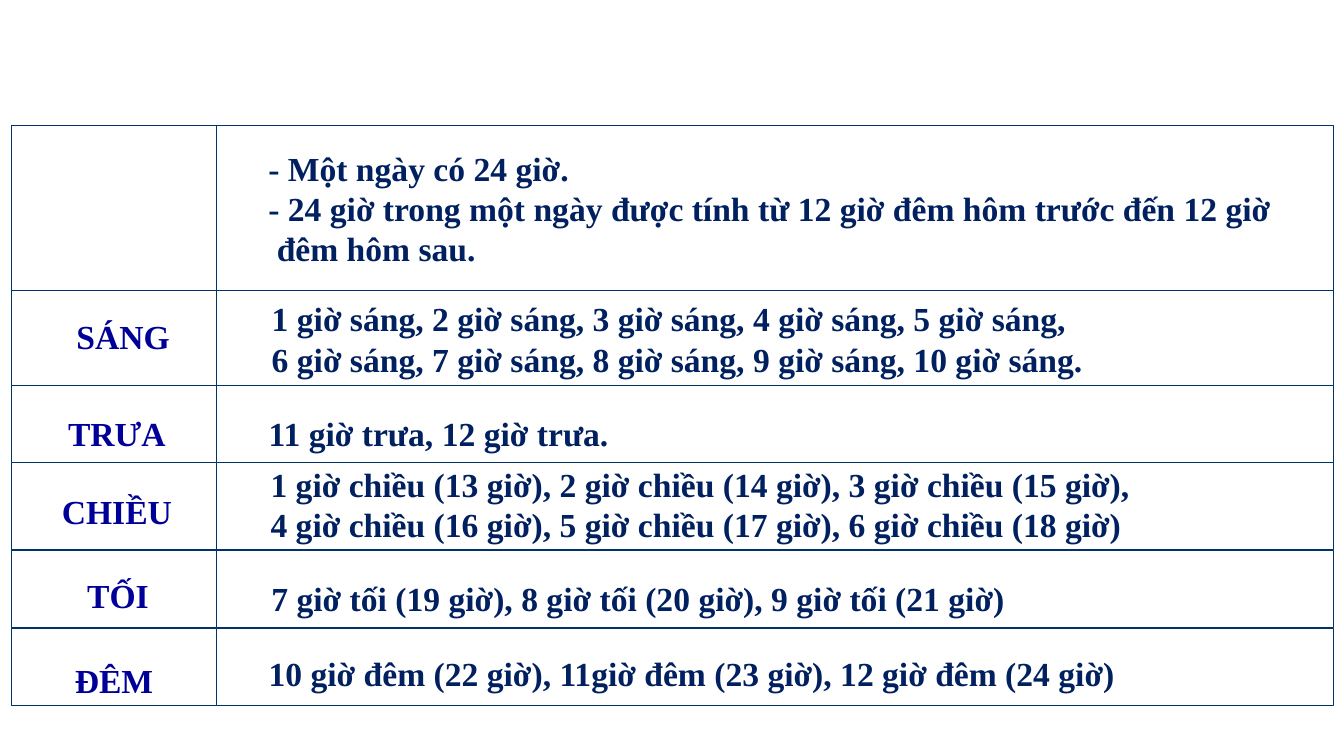
from pptx import Presentation
from pptx.dml.color import RGBColor
from pptx.enum.shapes import MSO_SHAPE
from pptx.enum.text import MSO_ANCHOR, MSO_AUTO_SIZE, PP_ALIGN
from pptx.util import Pt

NAVY, BLUE, WHITE, BORDER = "002060", "000099", "FFFFFF", "003366"
LABEL_X, LABEL_W, LABEL_H = 7.92, 146.5, 60
HOURS_X, HOURS_W = 154.6, 797.8
INTRO = (90, 117.36)
INTRO_LINES = [
    ("- Một ngày có 24 giờ.", 30),
    ("- 24 giờ trong một ngày được tính từ 12 giờ đêm hôm trước đến 12 giờ", 30),
    ("đêm hôm sau.", 36),
]
ROWS = [(207.36, 68.2), (327.6, 64.8), (275.04, 55.4), (448.6, 55.4), (393.1, 55.4)]
LABELS = [
    ("SÁNG", 23.8, 210.2, WHITE),
    ("TRƯA", 19.4, 279.4, None),
    ("CHIỀU", 19.4, 334.8, None),
    ("TỐI", 20.2, 395.3, None),
    ("ĐÊM", 17.3, 455.8, None),
]
HOURS = [
    (157, 209.5, 794.9, 65.5, 30, WHITE,
     ["1 giờ sáng, 2 giờ sáng, 3 giờ sáng, 4 giờ sáng, 5 giờ sáng,",
      "6 giờ sáng, 7 giờ sáng, 8 giờ sáng, 9 giờ sáng, 10 giờ sáng."]),
    (154.8, 291.6, 802.8, 36, 30, None, ["11 giờ trưa, 12 giờ trưa."]),
    (156.2, 327.6, 796.3, 65.5, 30, None,
     ["1 giờ chiều (13 giờ), 2 giờ chiều (14 giờ), 3 giờ chiều (15 giờ),",
      "4 giờ chiều (16 giờ), 5 giờ chiều (17 giờ), 6 giờ chiều (18 giờ)"]),
    (162.7, 409, 783.4, 36, 24, None,
     ["7 giờ tối (19 giờ), 8 giờ tối (20 giờ), 9 giờ tối (21 giờ)"]),
    (154.8, 463, 796.3, 36, 30, None,
     ["10 giờ đêm (22 giờ), 11giờ đêm (23 giờ), 12 giờ đêm (24 giờ)"]),
]


def rgb(value):
    return RGBColor.from_string(value)


def apply(target, formats):
    for name, value in formats.items():
        setattr(target, name, value)


class Board:
    font = {"name": "Times New Roman", "size": Pt(24), "bold": True}
    label_frame = {"word_wrap": False, "vertical_anchor": MSO_ANCHOR.MIDDLE}
    intro_frame = {"word_wrap": True, "vertical_anchor": MSO_ANCHOR.MIDDLE}
    hours_frame = {"word_wrap": True, "vertical_anchor": MSO_ANCHOR.TOP,
                   "auto_size": MSO_AUTO_SIZE.SHAPE_TO_FIT_TEXT}

    def __init__(self, slide):
        self.slide = slide
        self.grid = slide.shapes.add_group_shape()

    def box(self, shapes, kind, x, y, w, h, fill, line=None):
        sp = shapes.add_shape(kind, Pt(x), Pt(y), Pt(w), Pt(h))
        sp.shadow.inherit = False
        if fill:
            sp.fill.solid()
            sp.fill.fore_color.rgb = rgb(fill)
        else:
            sp.fill.background()
        if line:
            sp.line.color.rgb = rgb(line)
            sp.line.width = Pt(0.75)
        else:
            sp.line.fill.background()
        return sp

    def text(self, sp, lines, frame, color, align=PP_ALIGN.LEFT):
        tf = sp.text_frame
        apply(tf, frame)
        for i, (words, indent) in enumerate(lines):
            p = tf.add_paragraph() if i else tf.paragraphs[0]
            p.alignment = align
            if indent:
                p._p.get_or_add_pPr().set("marL", str(Pt(indent)))
            r = p.add_run()
            r.text = words
            apply(r.font, self.font)
            r.font.color.rgb = rgb(color)

    def row(self, y, h):
        return [self.box(self.grid.shapes, MSO_SHAPE.FLOWCHART_PROCESS, x, y, w, h, WHITE, BORDER)
                for x, w in ((LABEL_X, LABEL_W), (HOURS_X, HOURS_W))]

    def label(self, words, x, y, fill):
        sp = self.box(self.slide.shapes, MSO_SHAPE.FLOWCHART_PROCESS, x, y, 128.2, LABEL_H, fill)
        self.text(sp, [(words, 0)], self.label_frame, BLUE, PP_ALIGN.CENTER)

    def hours(self, x, y, w, h, indent, fill, lines):
        if fill:
            sp = self.box(self.slide.shapes, MSO_SHAPE.RECTANGLE, x, y, w, h, fill)
        else:
            sp = self.slide.shapes.add_textbox(Pt(x), Pt(y), Pt(w), Pt(h))
        self.text(sp, [(words, indent) for words in lines], self.hours_frame, NAVY)


def main():
    prs = Presentation()
    prs.slide_width, prs.slide_height = Pt(960), Pt(540)
    board = Board(prs.slides.add_slide(prs.slide_layouts[6]))
    intro = board.row(*INTRO)[1]
    board.text(intro, INTRO_LINES, board.intro_frame, NAVY)
    for row in ROWS:
        board.row(*row)
    for label in LABELS:
        board.label(*label)
    for hours in HOURS:
        board.hours(*hours)
    prs.save("out.pptx")


if __name__ == "__main__":
    main()
